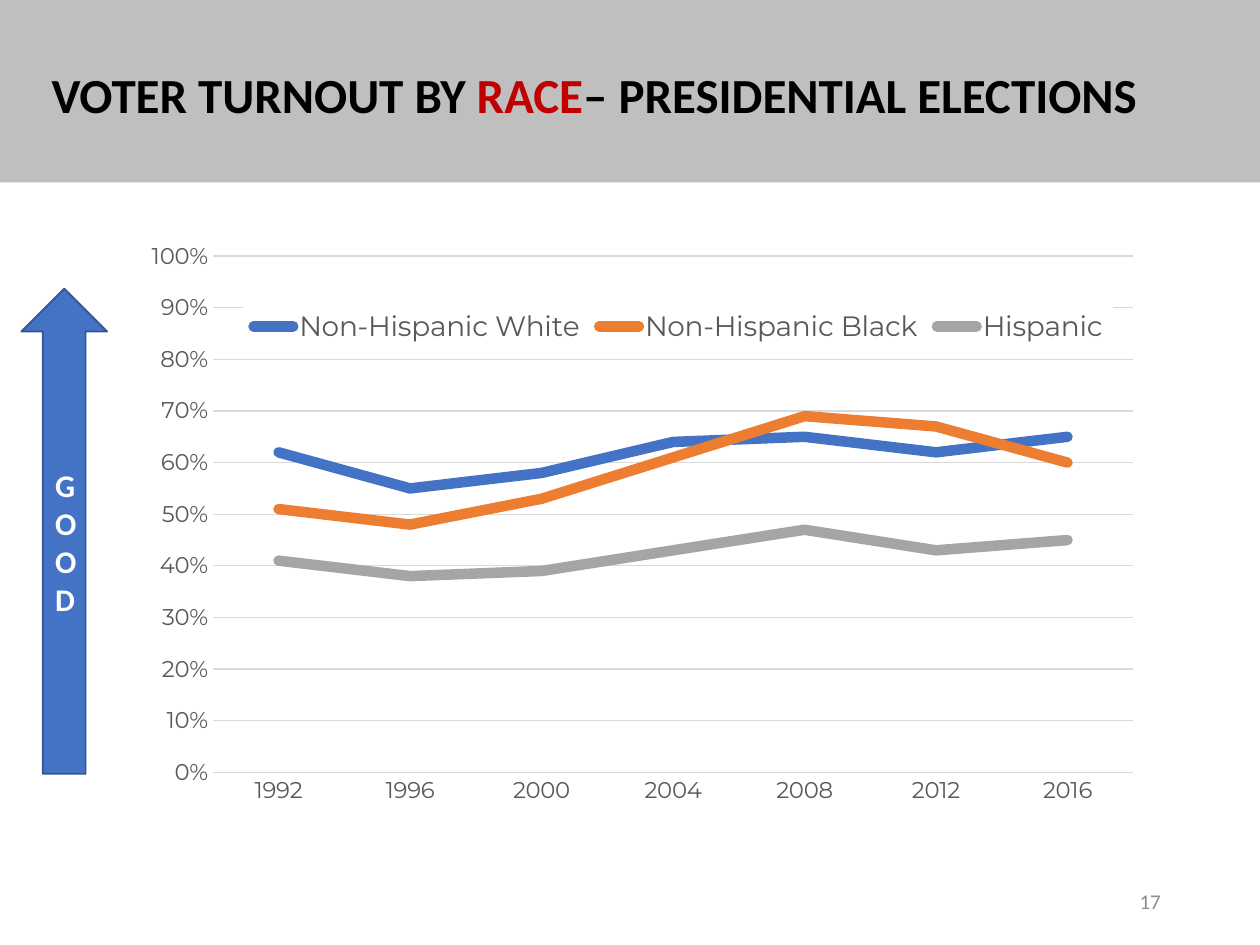
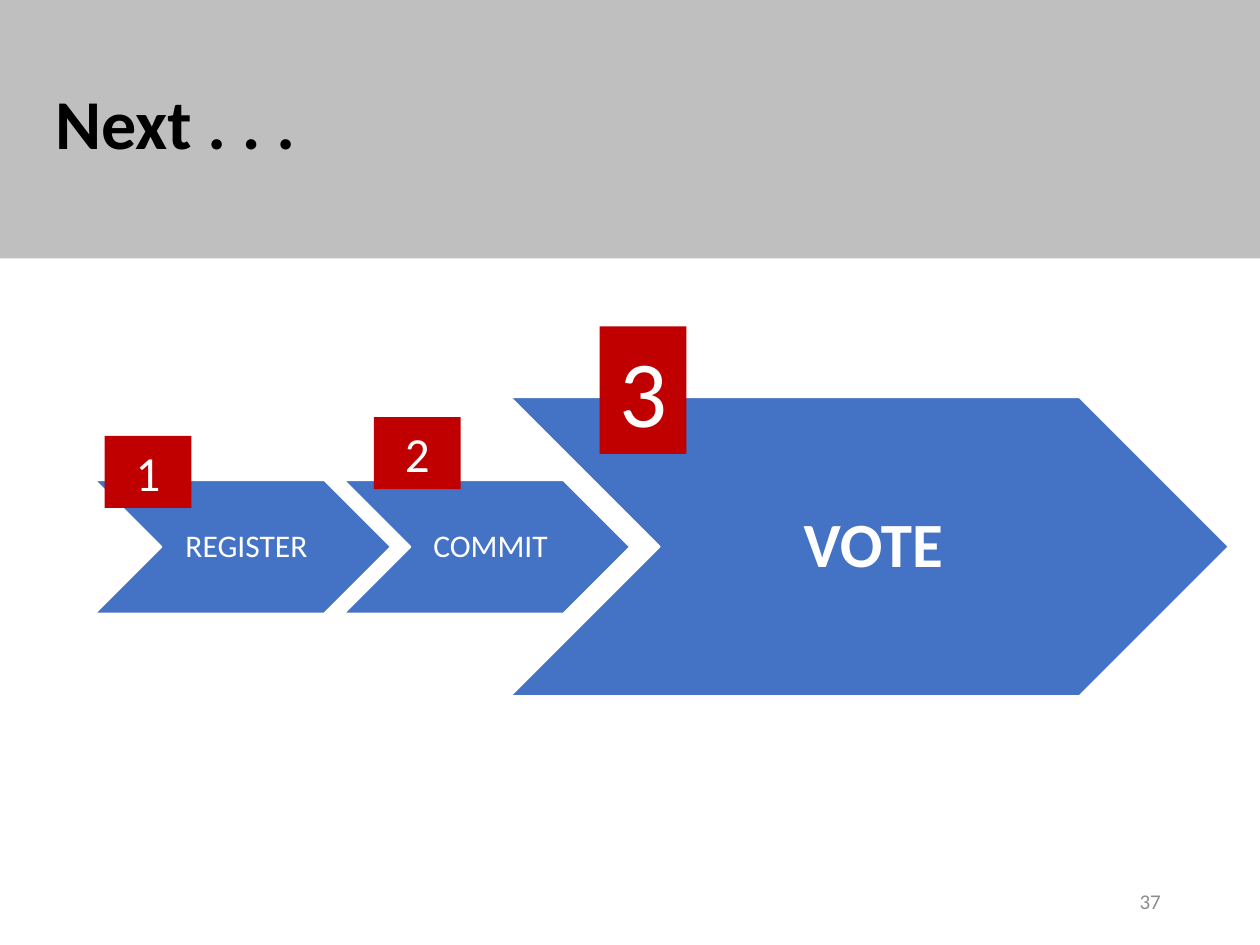
from dataclasses import dataclass

from lxml import etree
from pptx import Presentation
from pptx.chart.data import CategoryChartData
from pptx.dml.color import RGBColor
from pptx.enum.chart import XL_CHART_TYPE, XL_LEGEND_POSITION, XL_MARKER_STYLE, XL_TICK_MARK
from pptx.enum.shapes import MSO_SHAPE
from pptx.enum.text import MSO_ANCHOR, PP_ALIGN
from pptx.oxml import parse_xml
from pptx.oxml.ns import nsdecls, qn
from pptx.util import Cm, Pt

LINE = XL_CHART_TYPE.LINE
BOTTOM = XL_LEGEND_POSITION.BOTTOM
NO_MARK = XL_MARKER_STYLE.NONE
NO_TICK = XL_TICK_MARK.NONE
RECT, UP, CHEVRON = MSO_SHAPE.RECTANGLE, MSO_SHAPE.UP_ARROW, MSO_SHAPE.CHEVRON
TOP, MIDDLE = MSO_ANCHOR.TOP, MSO_ANCHOR.MIDDLE
LEFT, CENTER, RIGHT = PP_ALIGN.LEFT, PP_ALIGN.CENTER, PP_ALIGN.RIGHT

BODY, LABEL = "Calibri", "Montserrat"
BLACK, WHITE, RED, BLUE = "000000", "FFFFFF", "C00000", "4472C4"
BAND, EDGE, GRID = "BFBFBF", "325491", "D9D9D9"
MUTED, TEXT = "8C8C8C", "595959"
WIDE, HIGH = 25.4, 19.05


@dataclass
class Box:
    x: float
    y: float
    w: float
    h: float

    def cm(self) -> list:
        return [Cm(v) for v in (self.x, self.y, self.w, self.h)]


@dataclass
class Run:
    text: str
    size: float
    color: str = WHITE
    bold: bool = False


@dataclass
class Step:
    label: Run
    box: Box
    badge: Box
    number: Run


@dataclass
class Trend:
    name: str
    color: str
    values: list[float]


YEARS = [str(year) for year in range(1992, 2017, 4)]
TRENDS = [
    Trend("Non-Hispanic White", BLUE, [0.62, 0.55, 0.58, 0.64, 0.65, 0.62, 0.65]),
    Trend("Non-Hispanic Black", "ED7D31", [0.51, 0.48, 0.53, 0.61, 0.69, 0.67, 0.6]),
    Trend("Hispanic", "A5A5A5", [0.41, 0.38, 0.39, 0.43, 0.47, 0.43, 0.45]),
]
STEPS = [
    Step(Run("REGISTER", 18), Box(1.91, 9.68, 5.97, 2.69),
         Box(2.11, 8.79, 1.75, 1.45), Run("1", 28)),
    Step(Run("COMMIT", 18), Box(6.93, 9.68, 5.77, 2.69),
         Box(7.54, 8.41, 1.75, 1.45), Run("2", 28)),
    Step(Run("VOTE", 36, bold=True), Box(10.29, 8.01, 14.48, 6.02),
         Box(12.09, 6.58, 1.75, 2.57), Run("3", 54)),
]


def rgb(code: str) -> RGBColor:
    return RGBColor.from_string(code)


def write(shape, runs: list[Run], align=LEFT, anchor=TOP, space: float = 1.0) -> None:
    frame = shape.text_frame
    frame.word_wrap = True
    frame.vertical_anchor = anchor
    para = frame.paragraphs[0]
    para.alignment = align
    para.line_spacing = space
    for item in runs:
        run = para.add_run()
        run.text = item.text
        font = run.font
        font.name, font.size, font.bold = BODY, Pt(item.size), item.bold
        font.color.rgb = rgb(item.color)


def label(slide, box: Box, runs: list[Run], **style) -> None:
    write(slide.shapes.add_textbox(*box.cm()), runs, **style)


def block(slide, kind, box: Box, fill: str, edge: str = ""):
    """Add a filled shape, outlined only when an edge colour is given."""
    shape = slide.shapes.add_shape(kind, *box.cm())
    shape.shadow.inherit = False
    shape.fill.solid()
    shape.fill.fore_color.rgb = rgb(fill)
    if edge:
        shape.line.color.rgb = rgb(edge)
        shape.line.width = Pt(1)
    else:
        shape.line.fill.background()
    return shape


def begin(deck, depth: float, box: Box, title: list[Run], page: str, **style):
    """Start a slide with its title band and page number."""
    slide = deck.slides.add_slide(deck.slide_layouts[6])
    block(slide, RECT, Box(0, 0, WIDE, depth), BAND)
    label(slide, box, title, **style)
    label(slide, Box(17.93, 17.65, 5.72, 1.02), [Run(page, 12, MUTED)],
          align=RIGHT, anchor=MIDDLE)
    return slide


def place(x: float, y: float, w: float, h: float, inner: bool = False):
    """Make a manual layout in fractions of the chart."""
    target = '<c:layoutTarget val="inner"/>' if inner else ""
    modes = '<c:xMode val="edge"/><c:yMode val="edge"/>'
    sizes = "".join(f'<c:{k} val="{v}"/>' for k, v in zip("xywh", (x, y, w, h)))
    return parse_xml(f'<c:layout {nsdecls("c")}><c:manualLayout>{target}{modes}{sizes}'
                     "</c:manualLayout></c:layout>")


def tint(font, size: float) -> None:
    font.name, font.size = LABEL, Pt(size)
    font.color.rgb = rgb(TEXT)


def style_axes(chart) -> None:
    for axis in (chart.category_axis, chart.value_axis):
        axis.major_tick_mark = axis.minor_tick_mark = NO_TICK
        tint(axis.tick_labels.font, 13)
    line = chart.category_axis.format.line
    line.color.rgb, line.width = rgb(GRID), Pt(1)
    axis = chart.value_axis
    axis.minimum_scale, axis.maximum_scale, axis.major_unit = 0, 1, 0.1
    axis.tick_labels.number_format = "0%"
    axis.tick_labels.number_format_is_linked = False
    axis.format.line.fill.background()
    grid = axis.major_gridlines.format.line
    grid.color.rgb, grid.width = rgb(GRID), Pt(0.75)


def style_key(chart) -> None:
    """Set the legend on a white panel over the plot."""
    chart.has_legend = True
    key = chart.legend
    key.position = BOTTOM
    key.include_in_layout = True
    tint(key.font, 16)
    node = key._element
    for old in node.findall(qn("c:layout")):
        node.remove(old)
    node.find(qn("c:legendPos")).addnext(place(0.11, 0.11, 0.85, 0.08))
    node.find(qn("c:overlay")).addnext(parse_xml(
        f'<c:spPr {nsdecls("c", "a")}><a:solidFill><a:srgbClr val="{WHITE}"/>'
        "</a:solidFill></c:spPr>"))


def draw_chart(slide, box: Box) -> None:
    data = CategoryChartData(number_format="0%")
    data.categories = YEARS
    for trend in TRENDS:
        data.add_series(trend.name, trend.values)
    chart = slide.shapes.add_chart(LINE, *box.cm(), data).chart
    chart.has_title = False
    chart.font.name, chart.font.size = BODY, Pt(10)
    chart.font.color.rgb = rgb(BLACK)
    plot = chart.plots[0]
    plot.vary_by_categories = False
    for series, trend in zip(plot.series, TRENDS):
        series.smooth = False
        series.marker.style = NO_MARK
        line = series.format.line
        line.color.rgb, line.width = rgb(trend.color), Pt(6)
        stroke = series._element.find(qn("c:spPr")).find(qn("a:ln"))
        stroke.set("cap", "rnd")
        etree.SubElement(stroke, qn("a:round"))
    style_axes(chart)
    style_key(chart)
    area = plot._element.getparent()
    for old in area.findall(qn("c:layout")):
        area.remove(old)
    area.insert(0, place(0.08, 0.04, 0.9, 0.81, inner=True))


def draw_step(slide, step: Step) -> None:
    arrow = block(slide, CHEVRON, step.box, BLUE, WHITE)
    frame = arrow.text_frame
    frame.margin_left, frame.margin_right = Cm(0.15), 0
    write(arrow, [step.label], align=CENTER, anchor=MIDDLE, space=0.9)


def draw_badge(slide, step: Step) -> None:
    write(block(slide, RECT, step.badge, RED), [step.number], align=CENTER)


def turnout(deck) -> None:
    title = [Run("VOTER TURNOUT BY ", 28, BLACK, True), Run("RACE", 28, RED, True),
             Run("– PRESIDENTIAL ELECTIONS", 28, BLACK, True)]
    slide = begin(deck, 3.68, Box(0.79, 1.17, 24.61, 2.64), title, "17")
    arrow = block(slide, UP, Box(0.43, 5.82, 1.73, 9.78), BLUE, EDGE)
    write(arrow, [Run("GOOD", 18, bold=True)], align=CENTER, anchor=MIDDLE)
    arrow.text_frame._txBody.bodyPr.set("vert", "wordArtVert")
    draw_chart(slide, Box(2.64, 4.65, 20.62, 12.85))


def action(deck) -> None:
    slide = begin(deck, 5.21, Box(0.86, 0.71, 24.54, 3.68),
                  [Run("Next . . .", 40, BLACK, True)], "37", anchor=MIDDLE, space=0.9)
    for draw in (draw_step, draw_badge):
        for step in STEPS:
            draw(slide, step)


def main() -> None:
    deck = Presentation()
    deck.slide_width, deck.slide_height = Cm(WIDE), Cm(HIGH)
    turnout(deck)
    action(deck)
    deck.save("out.pptx")


if __name__ == "__main__":
    main()
